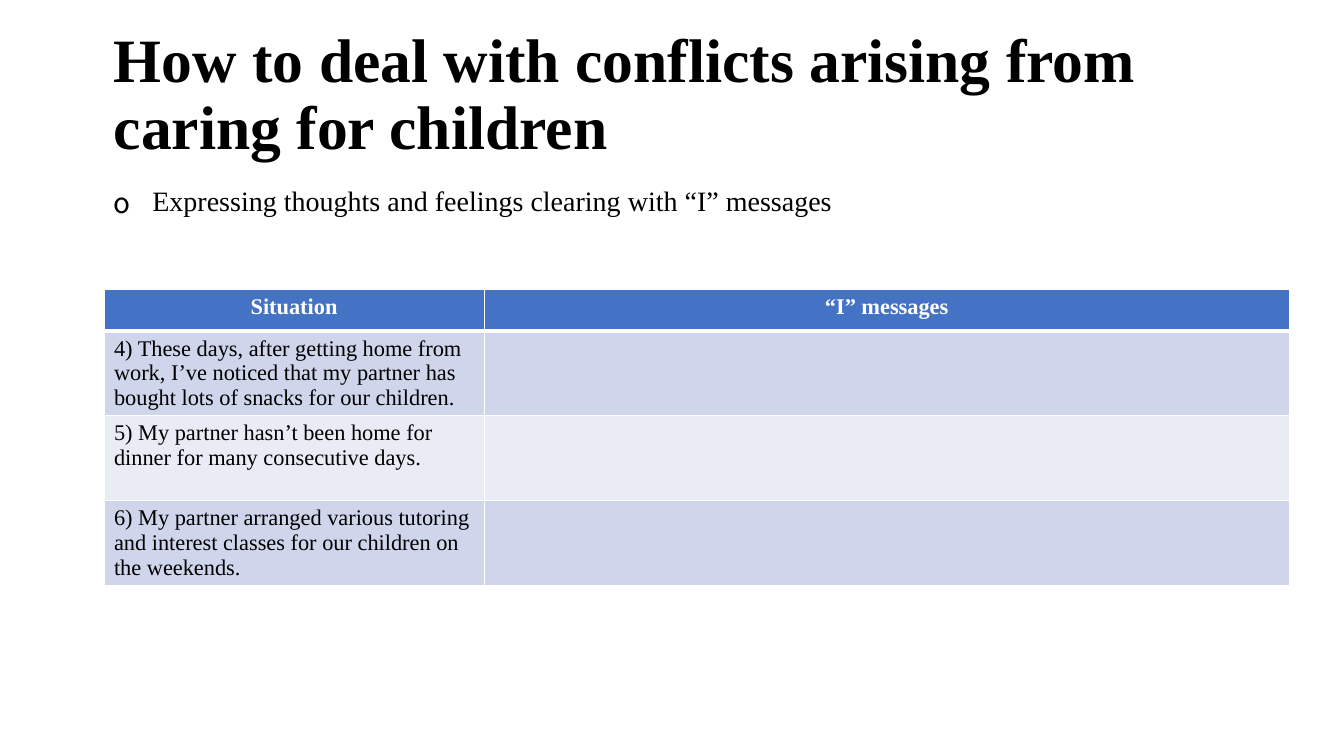
from lxml.etree import SubElement
from pptx import Presentation
from pptx.dml.color import RGBColor
from pptx.enum.text import MSO_ANCHOR as Anchor, PP_ALIGN as Align
from pptx.oxml.ns import qn
from pptx.util import Cm, Pt

TITLE = "How to deal with conflicts arising from caring for children"
POINT = "Expressing thoughts and feelings clearing with “I” messages"
HEADINGS = ("Situation", "“I” messages")
SITUATIONS = (
    "4) These days, after getting home from work, I’ve noticed that my partner "
    "has bought lots of snacks for our children.",
    "5) My partner hasn’t been home for dinner for many consecutive days.",
    "6) My partner arranged various tutoring and interest classes for our "
    "children on the weekends.",
)
FONT, BULLET_FONT = "Times New Roman", "Noto Sans CJK SC"
BLACK, WHITE, BLUE = "000000", "FFFFFF", "4472C4"
BANDS = ("CFD5EA", "E9EBF5")
LEFT, TEXT_WIDTH = 2.62, 29.21
COLUMN_WIDTHS = (9.58, 20.29)
HEADING_HEIGHT, SITUATION_HEIGHT = 1.04, 2.14
BULLET_INDENT = 0.97


def color(target, value):
    target.rgb = RGBColor.from_string(value)


def write(paragraph, text, size, value=BLACK, bold=False):
    run = paragraph.add_run()
    run.text = text
    run.font.name, run.font.size, run.font.bold = FONT, Pt(size), bold
    color(run.font.color, value)


def add_text(slide, text, top, height, size, bold=False, anchor=Anchor.TOP):
    frame = slide.shapes.add_textbox(
        Cm(LEFT), Cm(top), Cm(TEXT_WIDTH), Cm(height)).text_frame
    frame.word_wrap = True
    frame.vertical_anchor = anchor
    paragraph = frame.paragraphs[0]
    paragraph.line_spacing = 0.9
    write(paragraph, text, size, bold=bold)
    return paragraph


def add_bullet(paragraph):
    paragraph.space_before = Pt(10)
    properties = paragraph._p.get_or_add_pPr()
    properties.set("marL", str(Cm(BULLET_INDENT)))
    properties.set("indent", str(-Cm(BULLET_INDENT)))
    SubElement(properties, qn("a:buFont"), typeface=BULLET_FONT)
    SubElement(properties, qn("a:buChar"), char="o")


def style_cell(cell, fill, bottom):
    properties = cell._tc.get_or_add_tcPr()
    for side, width in (("L", 1), ("R", 1), ("T", 1), ("B", bottom)):
        line = SubElement(properties, qn("a:ln" + side), w=str(Pt(width)))
        SubElement(SubElement(line, qn("a:solidFill")), qn("a:srgbClr"), val=WHITE)
    cell.fill.solid()
    color(cell.fill.fore_color, fill)


def add_situations(slide):
    rows = [HEADINGS] + [(situation, "") for situation in SITUATIONS]
    heights = [HEADING_HEIGHT] + [SITUATION_HEIGHT] * len(SITUATIONS)
    table = slide.shapes.add_table(
        len(rows), len(HEADINGS), Cm(LEFT), Cm(7.3),
        Cm(sum(COLUMN_WIDTHS)), Cm(sum(heights))).table
    for column, width in zip(table.columns, COLUMN_WIDTHS):
        column.width = Cm(width)
    for r, (texts, height) in enumerate(zip(rows, heights)):
        heading = r == 0
        table.rows[r].height = Cm(height)
        for c, text in enumerate(texts):
            cell = table.cell(r, c)
            style_cell(cell, BLUE if heading else BANDS[(r - 1) % 2],
                       3 if heading else 1)
            paragraph = cell.text_frame.paragraphs[0]
            paragraph.alignment = Align.CENTER if heading else Align.LEFT
            if text:
                write(paragraph, text, 16, WHITE if heading else BLACK, heading)


def main():
    """Build the slide on "I" messages for conflicts over caring for children."""
    deck = Presentation()
    deck.slide_width, deck.slide_height = Cm(33.87), Cm(19.05)
    slide = deck.slides.add_slide(deck.slide_layouts[6])
    add_situations(slide)
    add_text(slide, TITLE, 0.58, 3.68, 44, True, Anchor.MIDDLE)
    add_bullet(add_text(slide, POINT, 4.6, 1.57, 20))
    deck.save("out.pptx")


if __name__ == "__main__":
    main()
